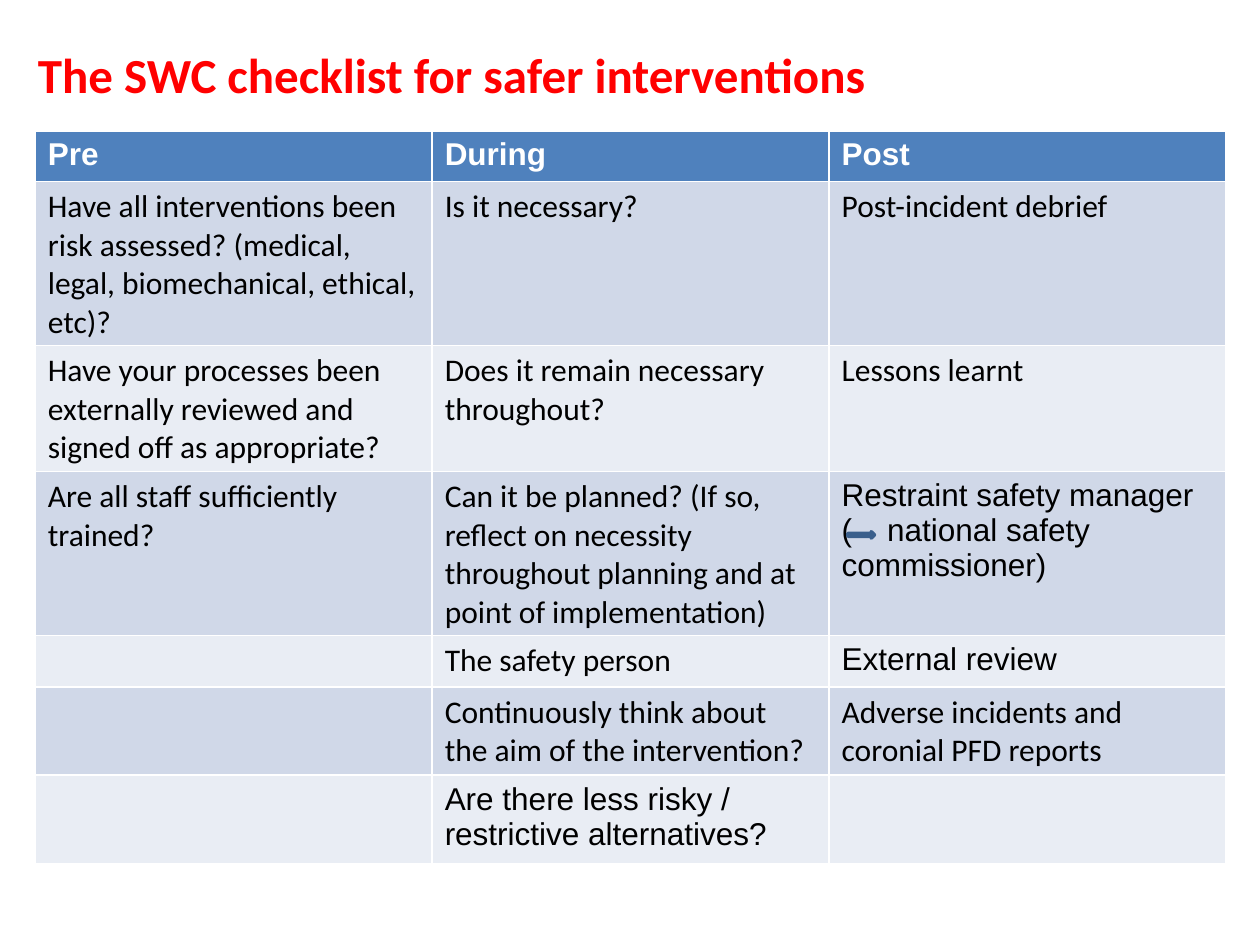
import pptx
import pptx.dml.color
import pptx.enum.shapes
import pptx.enum.text
import pptx.oxml
import pptx.oxml.ns
import pptx.util
from pptx.util import Inches

RGBColor = pptx.dml.color.RGBColor
RED = RGBColor(0xFF, 0x00, 0x00)
WHITE = RGBColor(0xFF, 0xFF, 0xFF)
BLACK = RGBColor(0x00, 0x00, 0x00)
BLUE = RGBColor(0x4F, 0x81, 0xBD)
DARK_BLUE = RGBColor(0x3A, 0x5F, 0x8C)
BANDS = (RGBColor(0xE9, 0xED, 0xF4), RGBColor(0xD0, 0xD8, 0xE8))

COLUMN_WIDTH = 3.15
ROW_HEIGHTS = (0.4, 1.3, 1.0, 1.29, 0.41, 0.7, 0.7)
ARROW_GAP = 0.36
CHECKLIST = (
    ("Pre", "During", "Post"),
    ("Have all interventions been risk assessed? (medical, legal, biomechanical, ethical, etc)?",
     "Is it necessary?", "Post-incident debrief"),
    ("Have your processes been externally reviewed and signed off as appropriate?",
     "Does it remain necessary throughout?", "Lessons learnt"),
    ("Are all staff sufficiently trained?",
     "Can it be planned? (If so, reflect on necessity throughout planning and at point of "
     "implementation)",
     "Restraint safety manager\n(\tnational safety commissioner)"),
    ("", "The safety person", "External review"),
    ("", "Continuously think about the aim of the intervention?",
     "Adverse incidents and coronial PFD reports"),
    ("", "Are there less risky / restrictive alternatives?", ""),
)
ARIAL_CELLS = {(3, 2), (4, 2), (6, 1)}


def style_font(para, name, size, color, bold=False):
    para.font.name = name
    para.font.size = pptx.util.Pt(size)
    para.font.color.rgb = color
    para.font.bold = bold


def add_tab_stop(para, position):
    """Put a left tab stop in a paragraph, leaving room for the inline arrow."""
    properties = para._p.get_or_add_pPr()
    tabs = pptx.oxml.parse_xml(
        f'<a:tabLst {pptx.oxml.ns.nsdecls("a")}><a:tab pos="{Inches(position)}" algn="l"/></a:tabLst>'
    )
    properties.insert(0, tabs)


def set_title(page, text):
    title = page.shapes.title
    title.left, title.top = Inches(0.2), Inches(0.3)
    title.width, title.height = Inches(9.61), Inches(0.57)
    frame = title.text_frame
    frame.text = text
    frame.word_wrap = True
    frame.auto_size = pptx.enum.text.MSO_AUTO_SIZE.SHAPE_TO_FIT_TEXT
    frame.vertical_anchor = pptx.enum.text.MSO_ANCHOR.TOP
    para = frame.paragraphs[0]
    para.alignment = pptx.enum.text.PP_ALIGN.LEFT
    style_font(para, "Calibri", 28, RED, bold=True)


def fill_cell(cell, text, fill, font_name, color, bold):
    cell.fill.solid()
    cell.fill.fore_color.rgb = fill
    cell.text_frame.text = text
    for para in cell.text_frame.paragraphs:
        style_font(para, font_name, 18, color, bold)
        if "\t" in para.text:
            add_tab_stop(para, ARROW_GAP)


def add_checklist(page):
    columns = len(CHECKLIST[0])
    table = page.shapes.add_table(
        len(CHECKLIST), columns, Inches(0.28), Inches(1.04),
        Inches(columns * COLUMN_WIDTH), Inches(sum(ROW_HEIGHTS))).table
    for column in table.columns:
        column.width = Inches(COLUMN_WIDTH)
    for r, texts in enumerate(CHECKLIST):
        table.rows[r].height = Inches(ROW_HEIGHTS[r])
        header = r == 0
        fill = BLUE if header else BANDS[r % 2]
        color = WHITE if header else BLACK
        for c, text in enumerate(texts):
            font_name = "Arial" if header or (r, c) in ARIAL_CELLS else "Calibri"
            fill_cell(table.cell(r, c), text, fill, font_name, color, header)


def add_arrow(page):
    arrow = page.shapes.add_shape(
        pptx.enum.shapes.MSO_SHAPE.RIGHT_ARROW,
        Inches(6.73), Inches(4.22), Inches(0.21), Inches(0.05))
    arrow.shadow.inherit = False
    arrow.fill.solid()
    arrow.fill.fore_color.rgb = BLUE
    arrow.line.color.rgb = DARK_BLUE
    arrow.line.width = pptx.util.Pt(2)


def main():
    deck = pptx.Presentation()
    deck.slide_width, deck.slide_height = Inches(10), Inches(7.5)
    page = deck.slides.add_slide(deck.slide_layouts.get_by_name("Title Only"))
    set_title(page, "The SWC checklist for safer interventions")
    add_checklist(page)
    add_arrow(page)
    deck.save("out.pptx")


if __name__ == "__main__":
    main()
